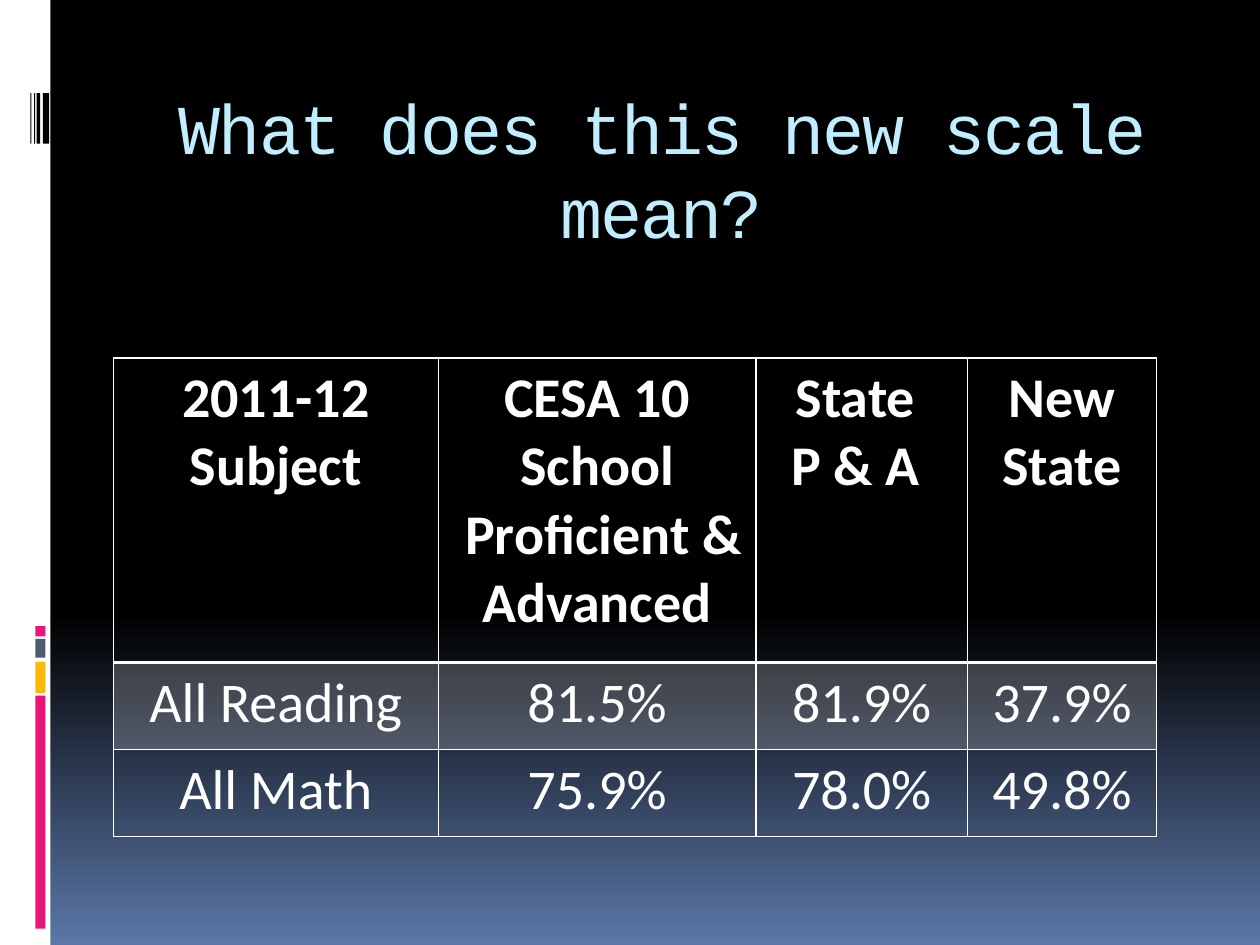
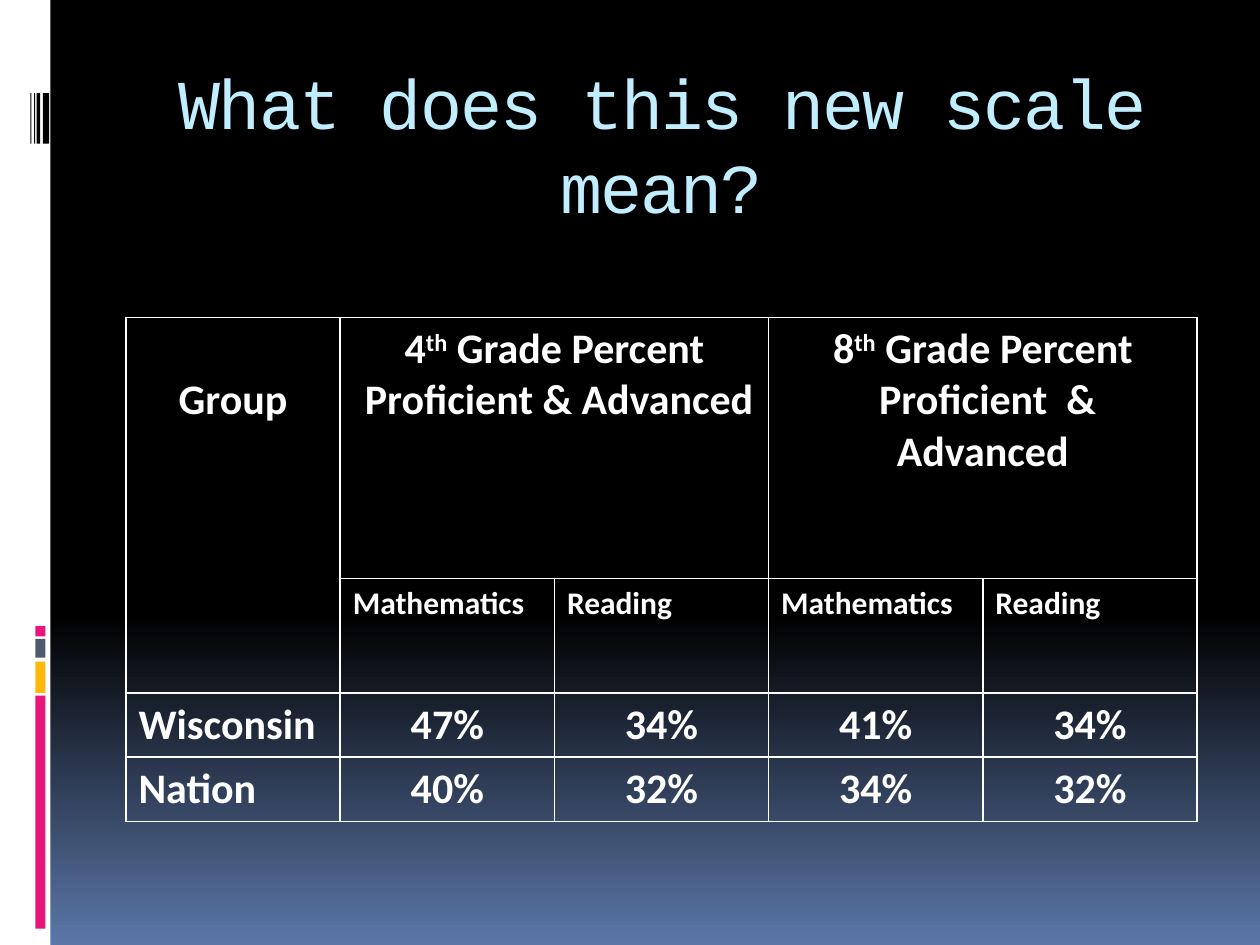
from copy import deepcopy

from lxml import etree
from pptx import Presentation
from pptx.dml.color import RGBColor
from pptx.enum import shapes, text
from pptx.oxml.ns import qn
from pptx.util import Inches, Pt

WHITE = RGBColor(0xFF, 0xFF, 0xFF)
BLACK = RGBColor(0x00, 0x00, 0x00)
DUSK_BLUE = RGBColor(0x5B, 0x77, 0xA8)
PINK = RGBColor(0xEA, 0x15, 0x7A)
AMBER = RGBColor(0xFE, 0xB8, 0x0A)
SLATE = RGBColor(0x4E, 0x5B, 0x6F)
ICE = RGBColor(0xC1, 0xEE, 0xFF)

TITLE_FONT = "Courier New"
BODY_FONT = "Calibri"
LEFT, CENTER = text.PP_ALIGN.LEFT, text.PP_ALIGN.CENTER

# Side decoration: left, top, width, height, colour
SIDE_BARS = [
    (0, 0, 0.4, 7.5, WHITE),
    (0.28, 5.52, 0.08, 1.85, PINK),
    (0.28, 5.25, 0.08, 0.25, AMBER),
    (0.28, 5.07, 0.08, 0.15, SLATE),
    (0.28, 4.97, 0.08, 0.08, PINK),
]
# Barcode stripes: left, width
STRIPES = [(0.34, 0.05), (0.29, 0.03), (0.27, 0.01), (0.24, 0.01)]


class Deck:
    def __init__(self):
        self.prs = Presentation()
        self.prs.slide_width = Inches(10)
        self.prs.slide_height = Inches(7.5)
        self.slide = None

    def new_slide(self):
        self.slide = self.prs.slides.add_slide(self.prs.slide_layouts[6])
        self.backdrop()
        for bar in SIDE_BARS:
            self.bar(*bar)
        for left, width in STRIPES:
            self.bar(left, 0.74, width, 0.4, BLACK)

    def backdrop(self):
        """Black down to 65 %, then fading to blue."""
        fill = self.slide.background.fill
        fill.gradient()
        fill.gradient_angle = 270
        first, last = fill.gradient_stops
        first.color.rgb, last.color.rgb = BLACK, DUSK_BLUE
        first.position, last.position = 0, 1
        stops = self.slide._element.find(".//" + qn("a:gsLst"))
        middle = deepcopy(stops[0])
        middle.set("pos", "65000")
        stops.insert(1, middle)

    def bar(self, left, top, width, height, color):
        bar = self.slide.shapes.add_shape(
            shapes.MSO_SHAPE.RECTANGLE,
            Inches(left), Inches(top), Inches(width), Inches(height))
        bar.shadow.inherit = False
        bar.fill.solid()
        bar.fill.fore_color.rgb = color
        bar.line.fill.background()

    def run(self, paragraph, words, size, font, color, bold=False):
        run = paragraph.add_run()
        run.text = words
        run.font.size = Pt(size)
        run.font.name = font
        run.font.color.rgb = color
        run.font.bold = bold
        return run._r.get_or_add_rPr()

    def title(self, words, top):
        box = self.slide.shapes.add_textbox(
            Inches(1), Inches(top), Inches(8.5), Inches(1.39))
        frame = box.text_frame
        frame.word_wrap = True
        frame.vertical_anchor = text.MSO_ANCHOR.TOP
        frame.margin_top = Inches(0.11)
        paragraph = frame.paragraphs[0]
        paragraph.alignment = CENTER
        paragraph.line_spacing = Pt(48)
        self.run(paragraph, words, 40, TITLE_FONT, ICE).set("spc", "-100")

    def table(self, left, top, widths, heights):
        frame = self.slide.shapes.add_table(
            len(heights), len(widths), Inches(left), Inches(top),
            Inches(sum(widths)), Inches(sum(heights)))
        table = frame.table
        table.first_row = table.horz_banding = False
        for column, width in zip(table.columns, widths):
            column.width = Inches(width)
        for row, height in zip(table.rows, heights):
            row.height = Inches(height)
        for cell in table.iter_cells():
            self.borders(cell)
            cell.fill.background()
        return table

    def borders(self, cell, **heavy):
        """Draw all four sides 1 pt wide unless a side is given a width."""
        tc_pr = cell._tc.get_or_add_tcPr()
        for place, side in enumerate("LRTB"):
            for old in tc_pr.findall(qn(f"a:ln{side}")):
                tc_pr.remove(old)
            line = etree.Element(qn(f"a:ln{side}"), w=str(Pt(heavy.get(side, 1))))
            solid = etree.SubElement(line, qn("a:solidFill"))
            etree.SubElement(solid, qn("a:srgbClr"), val=str(WHITE))
            tc_pr.insert(place, line)

    def tint(self, cell, percent):
        cell.fill.solid()
        cell.fill.fore_color.rgb = WHITE
        color = cell._tc.tcPr.find(qn("a:solidFill")).find(qn("a:srgbClr"))
        etree.SubElement(color, qn("a:alpha"), val=str(percent * 1000))

    def cell_text(self, cell, words, size, bold=True, align=CENTER):
        """One paragraph per line; words between ^ marks are superscript."""
        frame = cell.text_frame
        for number, line in enumerate(words.split("\n")):
            paragraph = frame.add_paragraph() if number else frame.paragraphs[0]
            paragraph.alignment = align
            for part, piece in enumerate(line.split("^")):
                props = self.run(paragraph, piece, size, BODY_FONT, WHITE, bold)
                if part % 2:
                    props.set("baseline", "30000")


def school_slide(deck):
    deck.new_slide()
    deck.title("What does this new scale mean?", 0.56)
    rows = [
        ["2011-12\nSubject", "CESA 10 School\n Proficient & Advanced",
         "State \nP & A ", "New State"],
        ["All Reading", "81.5%", "81.9%", "37.9%"],
        ["All Math", "75.9%", "78.0%", "49.8%"],
    ]
    scores = deck.table(0.9, 2.84, [2.58, 2.52, 1.68, 1.5], [2.42, 0.69, 0.69])
    for r, row in enumerate(rows):
        for c, words in enumerate(row):
            deck.cell_text(scores.cell(r, c), words, 32, bold=r == 0)
    # Heavy rule under the header, tinted reading row
    for c in range(len(rows[0])):
        deck.borders(scores.cell(0, c), B=2)
        deck.borders(scores.cell(1, c), T=2)
        deck.tint(scores.cell(1, c), 20)


def grade_slide(deck):
    deck.new_slide()
    deck.title("What does this new scale mean?", 0.36)
    grades = deck.table(1, 2.52, [1.7] * 5, [2.07, 0.91, 0.51, 0.51])
    # Merged headers
    group = grades.cell(0, 0)
    group.merge(grades.cell(1, 0))
    group.margin_top = Inches(0.45)
    deck.cell_text(group, "Group", 24)
    headers = ["4^th^ Grade Percent\n Proficient & Advanced",
               "8^th^ Grade Percent\n Proficient  & Advanced"]
    for c, header in zip((1, 3), headers):
        grades.cell(0, c).merge(grades.cell(0, c + 1))
        deck.cell_text(grades.cell(0, c), header, 24)
    for c, subject in enumerate(["Mathematics", "Reading"] * 2, 1):
        deck.cell_text(grades.cell(1, c), subject, 18, align=LEFT)
    # Results
    results = [["Wisconsin", "47%", "34%", "41%", "34%"],
               ["Nation", "40%", "32%", "34%", "32%"]]
    for r, row in enumerate(results, 2):
        for c, words in enumerate(row):
            deck.cell_text(grades.cell(r, c), words, 24,
                           align=CENTER if c else LEFT)


def main():
    deck = Deck()
    school_slide(deck)
    grade_slide(deck)
    deck.prs.save("out.pptx")


if __name__ == "__main__":
    main()
